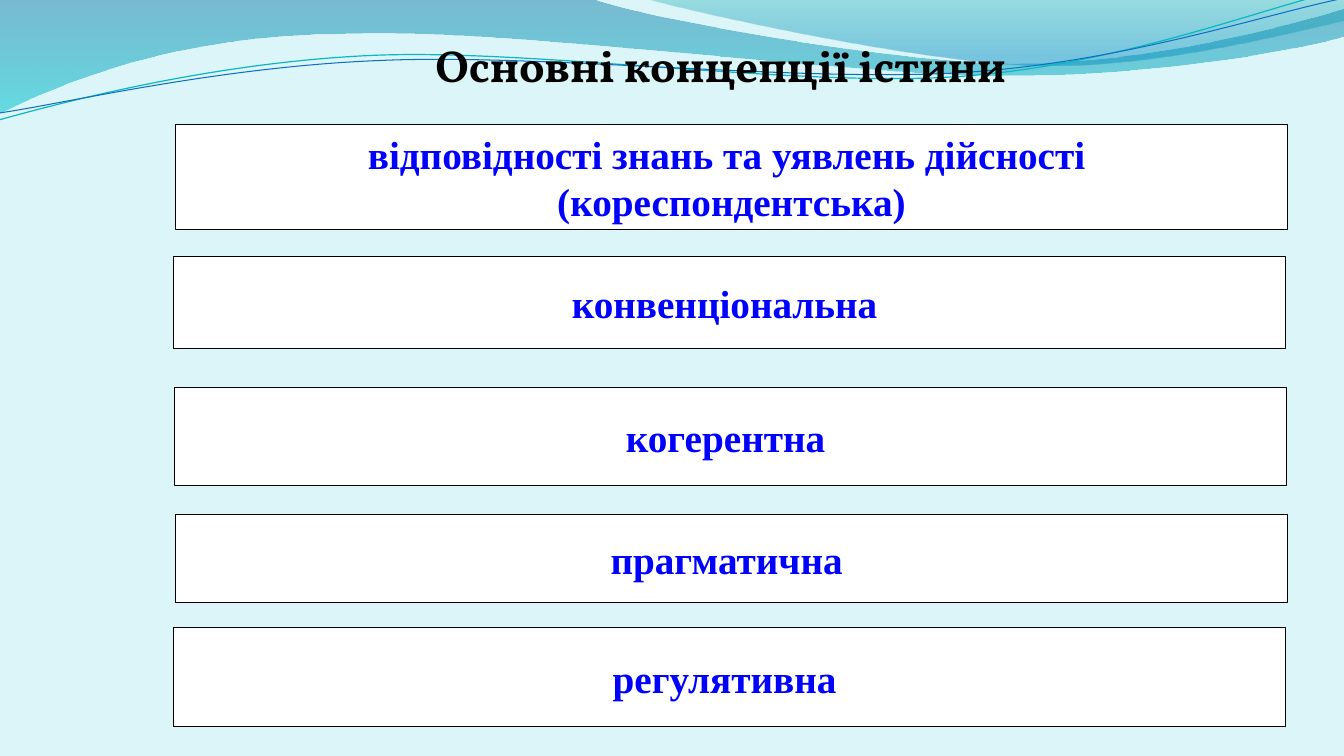
from math import cos, radians, sin

from lxml import etree
from pptx import Presentation
from pptx.dml.color import RGBColor
from pptx.enum.shapes import MSO_SHAPE
from pptx.enum.text import MSO_ANCHOR, MSO_AUTO_SIZE, PP_ALIGN
from pptx.oxml.ns import qn
from pptx.util import Inches, Pt

RECTANGLE = MSO_SHAPE.RECTANGLE
TOP, MIDDLE = MSO_ANCHOR.TOP, MSO_ANCHOR.MIDDLE
CENTER = PP_ALIGN.CENTER
GROW = MSO_AUTO_SIZE.SHAPE_TO_FIT_TEXT

BACKGROUND = RGBColor(0xDB, 0xF5, 0xF9)
BLACK = RGBColor(0x00, 0x00, 0x00)
WHITE = RGBColor(0xFF, 0xFF, 0xFF)
TEXT_BLUE = RGBColor(0x00, 0x00, 0xFF)
DEEP_BLUE = RGBColor(0x00, 0x74, 0xA1)
CYAN = RGBColor(0x00, 0xC6, 0xCF)
TEAL = RGBColor(0x00, 0xA1, 0xA9)
SKY_BLUE = RGBColor(0x00, 0x8B, 0xBF)
LINE_TEAL = RGBColor(0x0A, 0xB8, 0xBF)
LINE_BLUE = RGBColor(0x0F, 0x6F, 0xC6)

BOX_WIDTH = 11.03
CURVE_TILT = 2.7

LEFT_WAVE = [
    (0, -0.01), (5.87, -0.01),
    (6.34, 0.17, 8.85, 0.63, 10.11, 0.63),
    (11.38, 0.63, 12.78, 0.26, 13.33, 0.09),
    (13.35, 0.36),
    (13.11, 0.44, 11.6, 0.76, 9.94, 0.75),
    (8.29, 0.75, 5.09, 0.28, 3.43, 0.34),
    (1.72, 0.35, 0.61, 0.83, -0.01, 1.13),
    (0, -0.01),
]
RIGHT_WAVE = [
    (6.39, -0.01),
    (6.79, 0.11, 9.09, 0.62, 10.25, 0.65),
    (11.41, 0.69, 12.82, 0.32, 13.33, 0.21),
    (13.33, 0), (6.39, -0.01),
]
TEAL_CURVE = [
    (-0.01, 1.19),
    (0.64, 1.01, 2.11, 0.62, 3.69, 0.55),
    (5.27, 0.48, 7.9, 0.87, 9.5, 0.76),
    (11.1, 0.65, 12.52, 0.08, 13.31, -0.1),
]
BLUE_CURVE = [
    (0, 1.12),
    (0.63, 1.03, 2.18, 0.66, 3.78, 0.6),
    (5.37, 0.53, 7.96, 0.82, 9.55, 0.72),
    (11.15, 0.62, 12.55, 0.14, 13.34, -0.02),
]
CONCEPTS = [
    (1.74, 1.24, 1.04, ["відповідності знань та уявлень дійсності ", "(кореспондентська)"]),
    (1.72, 2.54, 0.92, ["конвенціональна "]),
    (1.73, 3.84, 0.98, ["когерентна "]),
    (1.74, 5.1, 0.88, ["прагматична "]),
    (1.72, 6.23, 0.98, ["регулятивна "]),
]


def split_points(segment):
    """Return the (x, y) pairs of a segment."""
    return list(zip(segment[::2], segment[1::2]))


def turn(segments, pivot, degrees):
    """Return the segments turned clockwise about the pivot."""
    cosine, sine = cos(radians(degrees)), sin(radians(degrees))
    turned = []
    for segment in segments:
        coordinates = []
        for x, y in split_points(segment):
            across, down = x - pivot[0], y - pivot[1]
            coordinates += [pivot[0] + across * cosine - down * sine,
                            pivot[1] + across * sine + down * cosine]
        turned.append(tuple(coordinates))
    return turned


def add_outline(shapes, segments, close):
    """Add a freeform of lines (one point) and Bézier curves (three points)."""
    points = [(Inches(x), Inches(y)) for segment in segments for x, y in split_points(segment)]
    builder = shapes.build_freeform(*points[0])
    builder.add_line_segments(points[1:], close=close)
    shape = builder.convert_to_shape()
    shape.shadow.inherit = False
    steps = iter(list(shape.element.spPr.iter(qn("a:lnTo"))))
    for segment in segments[1:]:
        first = next(steps)
        if len(segment) == 2:
            continue
        curve = etree.Element(qn("a:cubicBezTo"))
        first.addprevious(curve)
        for step in (first, next(steps), next(steps)):
            curve.append(step[0])
            step.getparent().remove(step)
    return shape


def add_wave(shapes, segments, stops):
    """Add a wave with a vertical, partly transparent gradient."""
    shape = add_outline(shapes, segments, True)
    shape.line.fill.background()
    shape.fill.gradient()
    shape.fill.gradient_angle = 270
    for gradient_stop, (position, color, _) in zip(shape.fill.gradient_stops, stops):
        gradient_stop.position = position
        gradient_stop.color.rgb = color
    colors = list(shape.element.spPr.iter(qn("a:srgbClr")))
    for element, (_, _, opacity) in zip(colors, stops):
        etree.SubElement(element, qn("a:alpha"), val=str(opacity * 1000))


def add_curve(shapes, segments, pivot, color, width):
    """Add an open curved line, tilted about its centre."""
    shape = add_outline(shapes, turn(segments, pivot, CURVE_TILT), False)
    shape.rotation = 360 - CURVE_TILT
    shape.fill.background()
    shape.line.color.rgb = color
    shape.line.width = Pt(width)


def write_text(shape, lines, font, size, color, anchor):
    """Write centred bold lines into a shape, one paragraph each."""
    frame = shape.text_frame
    frame.word_wrap = True
    frame.vertical_anchor = anchor
    for index, line in enumerate(lines):
        paragraph = frame.add_paragraph() if index else frame.paragraphs[0]
        paragraph.alignment = CENTER
        run = paragraph.add_run()
        run.text = line
        run.font.name = font
        run.font.size = Pt(size)
        run.font.bold = True
        run.font.color.rgb = color


def add_title(slide, text):
    """Place and format the title in front of the waves."""
    title = slide.shapes.title
    title.left, title.top = Inches(1.52), Inches(0.32)
    title.width, title.height = Inches(11.26), Inches(0.63)
    write_text(title, [text], font="Vollkorn", size=32, color=BLACK, anchor=TOP)
    title.text_frame.auto_size = GROW
    slide.shapes.element.append(title.element)


def add_concept(slide, left, top, height, lines):
    """Add a white box that names one concept."""
    shape = slide.shapes.add_shape(
        RECTANGLE, Inches(left), Inches(top), Inches(BOX_WIDTH), Inches(height))
    shape.shadow.inherit = False
    shape.fill.solid()
    shape.fill.fore_color.rgb = WHITE
    shape.line.color.rgb = BLACK
    shape.line.width = Pt(0.75)
    write_text(shape, lines, font="Times New Roman", size=28, color=TEXT_BLUE, anchor=MIDDLE)


def main():
    """Build the slide and save it."""
    presentation = Presentation()
    presentation.slide_width = Inches(13.33)
    presentation.slide_height = Inches(7.5)
    slide = presentation.slides.add_slide(presentation.slide_layouts.get_by_name("Title Only"))
    slide.background.fill.solid()
    slide.background.fill.fore_color.rgb = BACKGROUND

    add_wave(slide.shapes, LEFT_WAVE, [(0, DEEP_BLUE, 45), (1, CYAN, 55)])
    add_wave(slide.shapes, RIGHT_WAVE, [(0, TEAL, 30), (0.8, SKY_BLUE, 45)])
    curves = slide.shapes.add_group_shape().shapes
    add_curve(curves, TEAL_CURVE, (6.65, 0.57), LINE_TEAL, 0.85)
    add_curve(curves, BLUE_CURVE, (6.67, 0.59), LINE_BLUE, 0.75)
    add_title(slide, "Основні концепції істини")
    for left, top, height, lines in CONCEPTS:
        add_concept(slide, left, top, height, lines)

    presentation.save("out.pptx")


if __name__ == "__main__":
    main()
